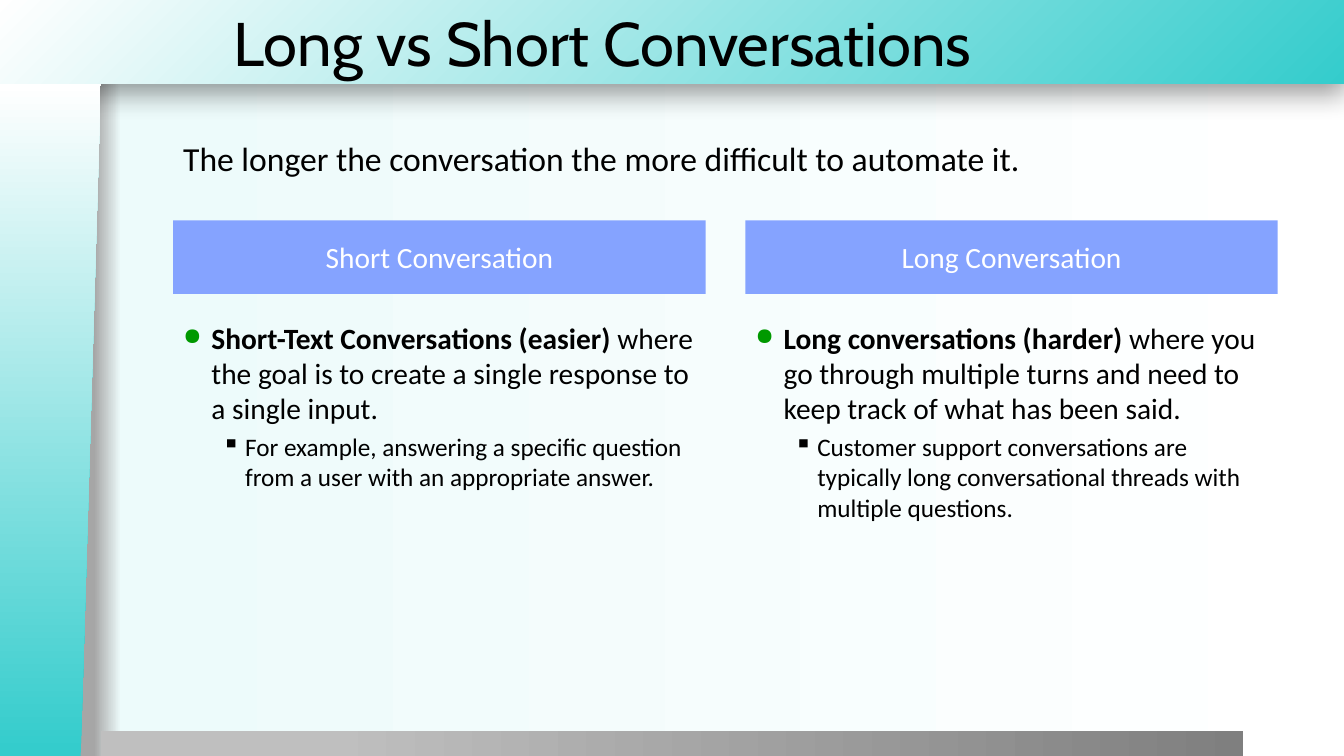
import pptx
import pptx.util
import pptx.dml.color
import pptx.enum.shapes
import pptx.enum.text
import pptx.oxml
import pptx.oxml.ns

qn = pptx.oxml.ns.qn
SHAPE = pptx.enum.shapes.MSO_SHAPE
ALIGN = pptx.enum.text.PP_ALIGN
ANCHOR = pptx.enum.text.MSO_ANCHOR
W, H = 1280, 720
HEADER_H = 80
LINEAR = '<a:lin ang="0" scaled="0"/>'
FROM_CORNER = ('<a:path path="circle"><a:fillToRect l="100000" t="100000"/></a:path>'
               '<a:tileRect r="-100000" b="-100000"/>')


def px(n):
    return pptx.util.Emu(n * 9525)


def color(hex_string):
    return pptx.dml.color.RGBColor.from_string(hex_string)


def xml(tag, attrs="", inner=""):
    return pptx.oxml.parse_xml(
        f'<a:{tag} {pptx.oxml.ns.nsdecls("a")} {attrs}>{inner}</a:{tag}>')


def set_gradient(props, stops, direction=LINEAR):
    """Replace the empty fill in a properties element by a gradient."""
    gs = "".join(f'<a:gs pos="{pos * 1000}"><a:srgbClr val="{c}"/></a:gs>' for pos, c in stops)
    grad = xml("gradFill", 'rotWithShape="1"', f"<a:gsLst>{gs}</a:gsLst>{direction}")
    props.replace(props.find(qn("a:noFill")), grad)


def place(sp, x, y, w, h):
    sp.left, sp.top, sp.width, sp.height = px(x), px(y), px(w), px(h)


def add_panel(s, kind, box, fill=None):
    sp = s.shapes.add_shape(kind, *map(px, box))
    sp.shadow.inherit = False
    sp.line.fill.background()
    if fill:
        sp.fill.solid()
        sp.fill.fore_color.rgb = color(fill)
    else:
        sp.fill.background()
    return sp


def add_text(p, text, size=21, font="Calibri", fill="000000", bold=False, align=ALIGN.LEFT):
    p.alignment = align
    r = p.add_run()
    r.text = text
    r.font.size = pptx.util.Pt(size)
    r.font.name = font
    r.font.bold = bold
    r.font.color.rgb = color(fill)


def add_textbox(s, box):
    tf = s.shapes.add_textbox(*map(px, box)).text_frame
    tf.word_wrap = True
    return tf


def set_bullet(p, char, indent, hanging, fill="000000", size=100):
    pPr = p._p.get_or_add_pPr()
    pPr.set("marL", str(px(indent)))
    pPr.set("indent", str(-px(hanging)))
    pPr.append(xml("buClr", inner=f'<a:srgbClr val="{fill}"/>'))
    pPr.append(xml("buSzPct", f'val="{size * 1000}"'))
    pPr.append(xml("buChar", f'char="{char}"'))


def build_backdrop(s):
    s.background.fill.background()
    set_gradient(s._element.find(".//" + qn("p:bgPr")),
                 [(7, "A6A6A6"), (9, "EDFBFB"), (100, "FFFFFF")])

    header = add_panel(s, SHAPE.RECTANGLE, (0, 0, W, HEADER_H))
    set_gradient(header._element.spPr, [(0, "34CCCC"), (100, "FFFFFF")], FROM_CORNER)
    header._element.spPr.find(qn("a:effectLst")).append(
        xml("outerShdw", 'blurRad="254000" dist="76200" dir="5400000" algn="t" rotWithShape="0"',
            '<a:srgbClr val="000000"><a:alpha val="40000"/></a:srgbClr>'))

    footer = add_panel(s, SHAPE.RECTANGLE, (96, 696, 1088, 25))
    set_gradient(footer._element.spPr, [(20, "BFBFBF"), (100, "7F7F7F")])

    # The side band is laid out flat, then turned upright about its centre
    length, width = H - HEADER_H, 96
    band = add_panel(s, SHAPE.FLOWCHART_MANUAL_INPUT,
                     ((width - length) // 2, HEADER_H + (length - width) // 2, length, width))
    band.rotation = 270
    band._element.spPr.find(qn("a:xfrm")).set("flipV", "1")
    set_gradient(band._element.spPr, [(1, "34CCCC"), (100, "FFFFFF")])


def build_title(s, box, text):
    title = s.shapes.title
    place(title, *box)
    tf = title.text_frame
    tf.auto_size = pptx.enum.text.MSO_AUTO_SIZE.NONE
    tf.vertical_anchor = ANCHOR.MIDDLE
    add_text(tf.paragraphs[0], text, size=44, font="Cabin")
    title._element.getparent().append(title._element)  # in front of the header


def build_column(s, box, heading, lead, rest, example):
    x, y, w, h = box
    tab = add_panel(s, SHAPE.RECTANGLE, (x, y, w, 70), "85A3FF")
    tab.text_frame.vertical_anchor = ANCHOR.MIDDLE
    add_text(tab.text_frame.paragraphs[0], heading, fill="FFFFFF", align=ALIGN.CENTER)

    tf = add_textbox(s, (x, y + 90, w, h - 90))
    p = tf.paragraphs[0]
    add_text(p, lead, bold=True)
    add_text(p, rest)
    set_bullet(p, "●", 27, 27, "009900", 80)
    p = tf.add_paragraph()
    p.space_before = pptx.util.Pt(4)
    add_text(p, example, size=18)
    set_bullet(p, "▪", 59, 22)


def main():
    prs = pptx.Presentation()
    prs.slide_width, prs.slide_height = px(W), px(H)
    s = prs.slides.add_slide(prs.slide_layouts[5])
    build_backdrop(s)
    build_title(s, (213, 0, 1067, HEADER_H), "Long vs Short Conversations")

    left, col_w, gap = 165, 507, 38
    lead_in = add_textbox(s, (left, 127, 886, 48))
    add_text(lead_in.paragraphs[0],
             "The longer the conversation the more difficult to automate it.", size=24)
    columns = [
        ("Short Conversation", "Short-Text Conversations (easier)",
         " where the goal is to create a single response to a single input.",
         "For example, answering a specific question from a user with an appropriate answer."),
        ("Long Conversation", "Long conversations (harder)",
         " where you go through multiple turns and need to keep track of what has been said.",
         "Customer support conversations are typically long conversational threads with "
         "multiple questions."),
    ]
    for i, texts in enumerate(columns):
        build_column(s, (left + i * (col_w + gap), 210, col_w, 476), *texts)
    prs.save("out.pptx")


if __name__ == "__main__":
    main()
